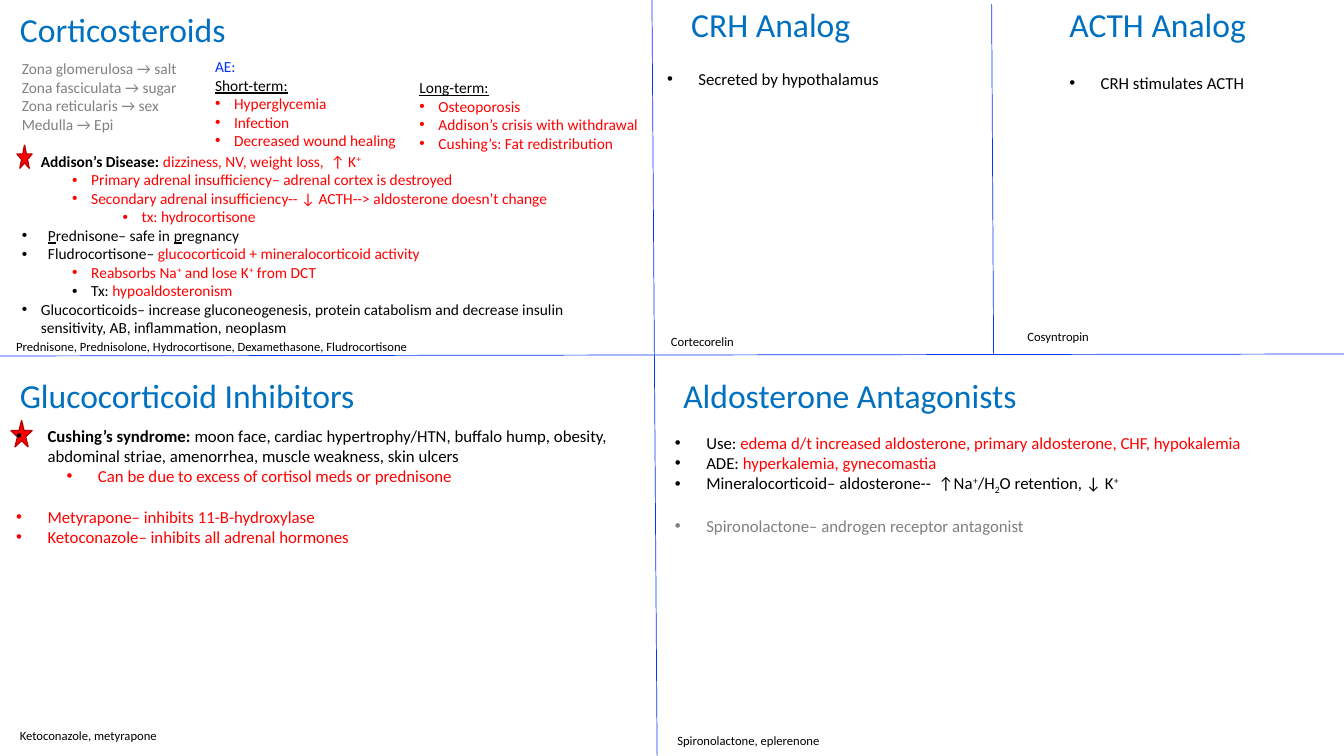
from lxml import etree
from pptx import Presentation
from pptx.dml.color import RGBColor
from pptx.enum.shapes import MSO_CONNECTOR, MSO_SHAPE
from pptx.enum.text import MSO_ANCHOR, MSO_AUTO_SIZE, PP_ALIGN
from pptx.oxml.ns import qn
from pptx.util import Cm, Pt

STRAIGHT = MSO_CONNECTOR.STRAIGHT
STAR = MSO_SHAPE.STAR_5_POINT
TOP = MSO_ANCHOR.TOP
LEFT = PP_ALIGN.LEFT
GROW = MSO_AUTO_SIZE.SHAPE_TO_FIT_TEXT

FONT = "Calibri"
COLORS = {"black": "000000", "red": "FF0000", "gray": "808080", "title": "0070C0",
          "blue": "0432FF", "star edge": "C00000"}
BASELINES = {"sup": "30000", "sub": "-25000"}
HANGING = {11: 0.48, 12: 0.79}  # bullet indent in cm by text size
LEVEL_STEP = 1.27
LINE_HEIGHT = 1.22

# Content: a paragraph is (bullet level or None, runs, optional settings),
# a run is (text, color, optional style)
CORTICOSTEROIDS = [
    (None, [("Zona glomerulosa → salt", "gray")]),
    (None, [("Zona fasciculata → sugar", "gray")]),
    (None, [("Zona reticularis → sex", "gray")]),
    (None, [("Medulla → Epi", "gray")]),
    (0, [("Addison’s Disease: ", "black", "bold"),
         ("dizziness, NV, weight loss,  ↑ K", "red"), ("+", "red", "sup")], {"gap": 1}),
    (1, [("Primary adrenal insufficiency– adrenal cortex is destroyed", "red")]),
    (1, [("Secondary adrenal insufficiency-- ↓ ACTH--> aldosterone doesn’t change", "red")]),
    (2, [("tx: hydrocortisone", "red")]),
    (0, [("P", "black", "underline"), ("rednisone– safe in ", "black"),
         ("p", "black", "underline"), ("regnancy", "black")], {"hanging": 0.66}),
    (0, [("Fludrocortisone– ", "black"),
         ("glucocorticoid + mineralocorticoid activity", "red")], {"hanging": 0.66}),
    (1, [("Reabsorbs Na", "red"), ("+", "red", "sup"), (" and lose K", "red"),
         ("+", "red", "sup"), (" from DCT", "red")]),
    (1, [("Tx: ", "black"), ("hypoaldosteronism", "red")]),
    (0, [("Glucocorticoids– increase gluconeogenesis, protein catabolism and decrease "
          "insulin sensitivity, AB, inflammation, neoplasm", "black")]),
]
SHORT_TERM = [
    (None, [("AE:", "blue")]),
    (None, [("Short-term:", "black", "underline")]),
    (0, [("Hyperglycemia", "red")]),
    (0, [("Infection", "red")]),
    (0, [("Decreased wound healing", "red")]),
]
LONG_TERM = [
    (None, [("Long-term:", "black", "underline")]),
    (0, [("Osteoporosis", "red")]),
    (0, [("Addison’s crisis with withdrawal", "red")]),
    (0, [("Cushing’s: Fat redistribution", "red")]),
]
GLUCOCORTICOID_INHIBITORS = [
    (0, [("Cushing’s syndrome: ", "black", "bold"),
         ("moon face, cardiac hypertrophy/HTN, buffalo hump, obesity, abdominal striae, "
          "amenorrhea, muscle weakness, skin ulcers", "black")]),
    (1, [("Can be due to excess of cortisol meds or prednisone", "red")]),
    (0, [("Metyrapone– inhibits 11-B-hydroxylase", "red")], {"gap": 1}),
    (0, [("Ketoconazole– inhibits all adrenal hormones", "red")]),
]
ALDOSTERONE_ANTAGONISTS = [
    (0, [("Use: ", "black"),
         ("edema d/t increased aldosterone, primary aldosterone, CHF, hypokalemia", "red")]),
    (0, [("ADE: ", "black"), ("hyperkalemia, gynecomastia", "red")]),
    (0, [("Mineralocorticoid– aldosterone--  ↑Na", "black"), ("+", "black", "sup"),
         ("/H", "black"), ("2", "black", "sub"), ("O retention, ↓ K", "black"),
         ("+", "black", "sup")]),
    (0, [("Spironolactone– androgen receptor antagonist", "gray")], {"gap": 1}),
]

# Places in cm: (left, top, width, ...)
SLIDE_TITLE = ("Corticosteroids", 0.25, 0.1, 14.76)
PANEL_TITLES = [
    ("CRH Analog", 17.17, -0.03, 6.35),
    ("ACTH Analog", 26.7, -0.03, 6.35),
    ("Glucocorticoid Inhibitors", 0.25, 9.32, 9.19),
    ("Aldosterone Antagonists", 16.97, 9.32, 9.65),
]
DRUG_LISTS = [
    ("Prednisone, Prednisolone, Hydrocortisone, Dexamethasone, Fludrocortisone",
     0.16, 8.41, 15.85),
    ("Cortecorelin", 16.66, 8.28, 6.81),
    ("Cosyntropin", 25.64, 8.16, 6.81),
    ("Ketoconazole, metyrapone", 0.25, 18.21, 6.32),
    ("Spironolactone, eplerenone", 16.82, 18.34, 5.84),
]
BODIES_BEHIND_STARS = [
    (CORTICOSTEROIDS, 11, (0.3, 1.37, 15.9, 8.26)),
    ([(0, [("Secreted by hypothalamus", "black")])], 12, (16.56, 1.6, 8.3, 0.76)),
    ([(0, [("CRH stimulates ACTH", "black")])], 12, (26.7, 1.7, 7.1, 0.76)),
]
BODIES_OVER_STARS = [
    (GLUCOCORTICOID_INHIBITORS, 12, (0.16, 10.6, 16.05, 4.37)),
    (SHORT_TERM, 11, (5.17, 1.32, 9.88, 2.62)),
    (LONG_TERM, 11, (10.32, 1.85, 6.12, 2.13)),
    (ALDOSTERONE_ANTAGONISTS, 12, (16.76, 10.77, 16.13, 3.18)),
]
STARS = [(0.43, 3.66, 0.38, 0.58), (0.28, 10.6, 0.53, 0.66)]
DIVIDERS = [(16.43, 0, 16.56, 19.05), (0, 8.97, 33.87, 8.92), (24.99, 0.1, 25.04, 8.92)]


def rgb(name):
    return RGBColor.from_string(COLORS[name])


def lengths(values):
    return [Cm(value) for value in values]


def add_run(paragraph, text, color, style="", size=12):
    run = paragraph.add_run()
    run.text = text
    run.font.name = FONT
    run.font.size = Pt(size)
    run.font.color.rgb = rgb(color)
    run.font.bold = style == "bold"
    run.font.underline = style == "underline"
    if style in BASELINES:
        run.font._element.set("baseline", BASELINES[style])


def add_bullet(paragraph, level, hanging):
    paragraph.level = level
    properties = paragraph._p.get_or_add_pPr()
    properties.set("marL", str(Cm(LEVEL_STEP * level + hanging)))
    properties.set("indent", str(-Cm(hanging)))
    etree.SubElement(properties, qn("a:buFont")).set("typeface", "Arial")
    etree.SubElement(properties, qn("a:buChar")).set("char", "•")


def write_text(shape, paragraphs, size=12):
    frame = shape.text_frame
    frame.word_wrap = True
    frame.auto_size = GROW
    frame.vertical_anchor = TOP
    for index, (level, runs, *settings) in enumerate(paragraphs):
        options = settings[0] if settings else {}
        paragraph = frame.add_paragraph() if index else frame.paragraphs[0]
        paragraph.alignment = LEFT
        paragraph.space_before = Pt(options.get("gap", 0) * size * LINE_HEIGHT)
        if level is not None:
            add_bullet(paragraph, level, options.get("hanging", HANGING[size]))
        for run in runs:
            add_run(paragraph, *run, size=size)


def add_text(slide, paragraphs, size, place):
    write_text(slide.shapes.add_textbox(*lengths(place)), paragraphs, size=size)


def main():
    presentation = Presentation()
    presentation.slide_width, presentation.slide_height = Cm(33.87), Cm(19.05)
    slide = presentation.slides.add_slide(presentation.slide_layouts[5])

    # Panel dividers
    for ends in DIVIDERS:
        divider = slide.shapes.add_connector(STRAIGHT, *lengths(ends))
        divider.line.color.rgb = rgb("blue")
        divider.line.width = Pt(0.5)
        etree.SubElement(divider._element.spPr, qn("a:effectLst"))

    # Titles and drug names
    text, *place = SLIDE_TITLE
    title = slide.shapes.title
    title.left, title.top, title.width, title.height = lengths([*place, 1.27])
    write_text(title, [(None, [(text, "title")])], size=24)
    for labels, color, size, height in ((PANEL_TITLES, "title", 24, 1.27),
                                        (DRUG_LISTS, "black", 9, 0.64)):
        for text, *place in labels:
            add_text(slide, [(None, [(text, color)])], size, [*place, height])

    # Notes, with the stars between the two groups
    for body in BODIES_BEHIND_STARS:
        add_text(slide, *body)
    for place in STARS:
        star = slide.shapes.add_shape(STAR, *lengths(place))
        star.shadow.inherit = False
        star.fill.solid()
        star.fill.fore_color.rgb = rgb("red")
        star.line.color.rgb = rgb("star edge")
        star.line.width = Pt(1)
    for body in BODIES_OVER_STARS:
        add_text(slide, *body)

    presentation.save("out.pptx")


if __name__ == "__main__":
    main()
